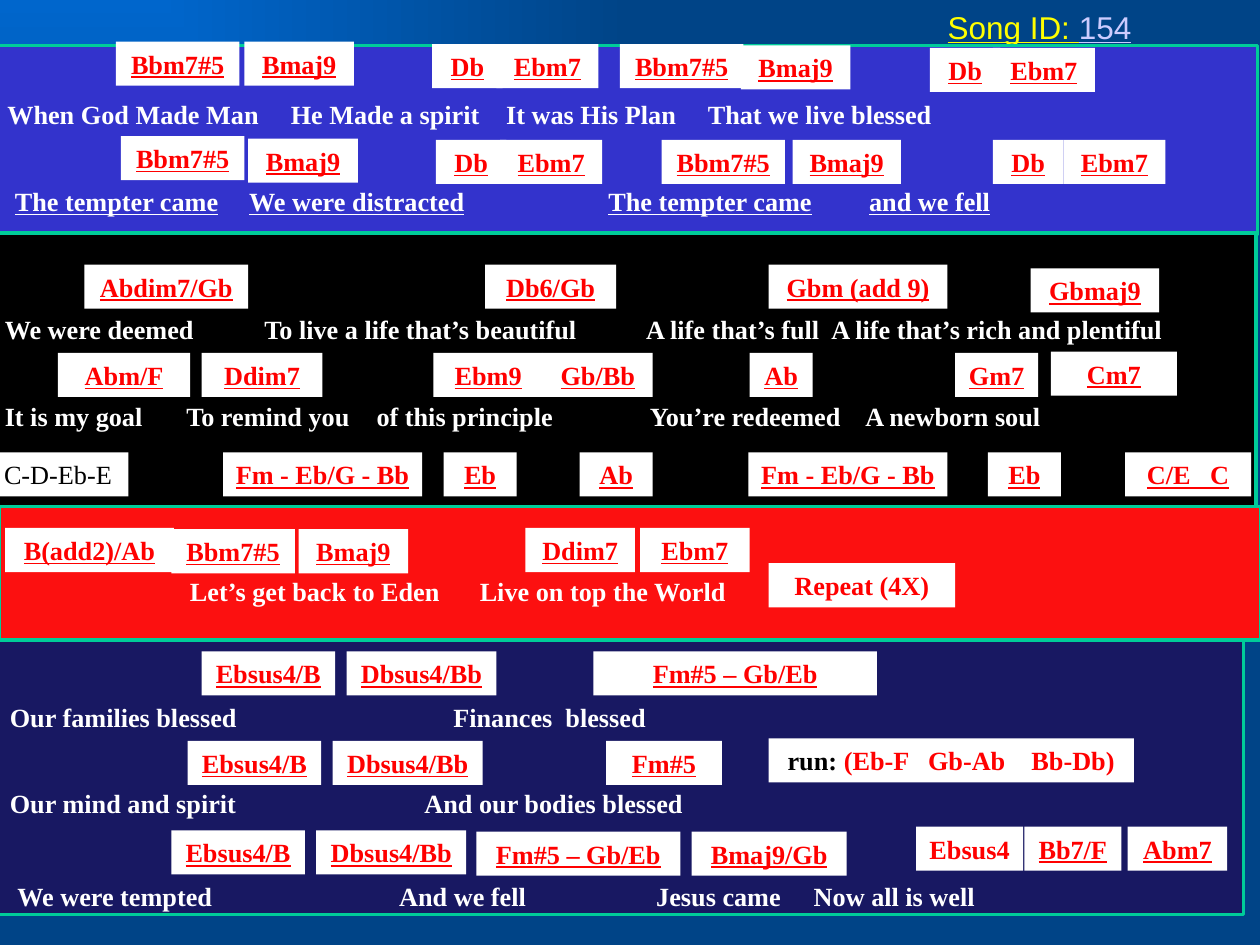
import pptx
import pptx.dml.color
import pptx.enum.dml
import pptx.enum.shapes
import pptx.enum.text
import pptx.oxml
import pptx.oxml.ns
import pptx.util

Inches = pptx.util.Inches
Pt = pptx.util.Pt
qn = pptx.oxml.ns.qn

COLORS = {
    "glow": "0066CC", "deep": "004487", "border": "00CC99",
    "verse": "3333CC", "chorus": "000000", "hook": "FC1010", "bridge": "181862",
    "white": "FFFFFF", "black": "000000", "chord": "FF0000",
    "label": "FFFF00", "number": "CCCCFF",
}
CHIP_STYLES = {  # colour, bold, underline
    "chord": ("chord", True, True),
    "note": ("chord", True, False),
    "notes": ("black", False, False),
}
SERIF = "Times New Roman"
ROW_HEIGHT = 0.35
INSET = 0.1

# Lyrics: left, top, phrases, tab positions, underline.
# Chips: left, top, width, text, then style and black lead-in where needed.
# All positions are measured from the section's top left corner.
VERSE_LYRICS = [
    (-0.04, 0.37, ["When God Made Man", "He Made a spirit", "It was His Plan",
                   "That we live blessed"], [2.31, 4.02, 5.62], False),
    (0.02, 1.06, ["The tempter came", "We were distracted", "The tempter came",
                  "and we fell"], [1.98, 4.83, 6.9], True),
]
VERSE_CHIPS = [
    (0.92, -0.03, 0.98, "Bbm7#5"), (1.94, -0.03, 0.87, "Bmaj9"),
    (3.43, -0.01, 0.56, "Db"), (3.94, -0.01, 0.81, "Ebm7"),
    (5.88, 0, 0.87, "Bmaj9"), (4.92, -0.01, 0.98, "Bbm7#5"),
    (7.38, 0.02, 0.56, "Db"), (7.88, 0.02, 0.81, "Ebm7"),
    (0.96, 0.72, 0.98, "Bbm7#5"), (1.97, 0.74, 0.87, "Bmaj9"),
    (3.46, 0.75, 0.56, "Db"), (3.97, 0.75, 0.81, "Ebm7"),
    (5.25, 0.75, 0.98, "Bbm7#5"), (6.29, 0.75, 0.86, "Bmaj9"),
    (7.88, 0.75, 0.56, "Db"), (8.44, 0.75, 0.81, "Ebm7"),
]
CHORUS_LYRICS = [
    (-0.06, 0.59, ["We were deemed", "To live a life that’s beautiful", "A life that’s full",
                   "A life that’s rich and plentiful"], [2.1, 5.13, 6.6], False),
    (-0.06, 1.28, ["It is my goal", "To remind you", "of this principle", "You’re redeemed",
                   "A newborn soul"], [1.48, 2.99, 5.16, 6.87], False),
]
CHORUS_CHIPS = [
    (0.67, 0.25, 1.3, "Abdim7/Gb"), (3.85, 0.25, 1.04, "Db6/Gb"),
    (6.1, 0.25, 1.42, "Gbm (add 9)"), (8.18, 0.28, 1.02, "Gbmaj9"),
    (0.46, 0.95, 1.05, "Abm/F"), (1.6, 0.95, 0.96, "Ddim7"),
    (3.44, 0.95, 0.87, "Ebm9"), (4.31, 0.95, 0.87, "Gb/Bb"),
    (5.95, 0.95, 0.5, "Ab"), (7.58, 0.95, 0.66, "Gm7"), (8.34, 0.94, 1, "Cm7"),
    (-0.1, 1.74, 1.12, "C-D-Eb-E", "notes"), (1.77, 1.74, 1.58, "Fm - Eb/G - Bb"),
    (3.52, 1.74, 0.58, "Eb"), (4.6, 1.74, 0.58, "Ab"),
    (5.94, 1.74, 1.58, "Fm - Eb/G - Bb"), (7.84, 1.74, 0.58, "Eb"),
    (8.93, 1.74, 1, "C/E   C"),
]
HOOK_LYRICS = [
    (0.01, 0.5, ["", "Let’s get back to Eden", "Live on top the World"], [1.51, 3.81], False),
]
HOOK_CHIPS = [
    (0.04, 0.17, 1.34, "B(add2)/Ab"), (1.36, 0.18, 0.98, "Bbm7#5"),
    (2.37, 0.18, 0.87, "Bmaj9"), (4.17, 0.17, 0.87, "Ddim7"),
    (5.08, 0.17, 0.87, "Ebm7"), (6.1, 0.45, 1.48, "Repeat (4X)", "note"),
]
BRIDGE_LYRICS = [
    (-0.02, 0.44, ["Our families blessed", "Finances  blessed"], [3.6], False),
    (-0.02, 1.12, ["Our mind and spirit", "And our bodies blessed"], [3.37], False),
    (0.04, 1.86, ["We were tempted", "And we fell", "Jesus came", "Now all is well"],
     [3.17, 5.21, 6.46], False),
]
BRIDGE_CHIPS = [
    (4.71, 0.09, 2.25, "Fm#5 – Gb/Eb"), (4.81, 0.8, 0.92, "Fm#5"),
    (6.1, 0.78, 2.9, "(Eb-F   Gb-Ab    Bb-Db)", "note", "run: "),
    (3.78, 1.52, 1.62, "Fm#5 – Gb/Eb"), (5.49, 1.52, 1.23, "Bmaj9/Gb"),
    (7.27, 1.48, 0.85, "Ebsus4", "note"), (8.13, 1.48, 0.77, "Bb7/F"),
    (8.95, 1.48, 0.79, "Abm7"),
]
for row_left, row_top in [(1.6, 0.09), (1.49, 0.8), (1.36, 1.51)]:
    BRIDGE_CHIPS += [(row_left, row_top, 1.06, "Ebsus4/B"),
                     (row_left + 1.15, row_top, 1.19, "Dbsus4/Bb")]


def rgb(name):
    return pptx.dml.color.RGBColor.from_string(COLORS[name])


def set_font(font, color, size=15, name=SERIF, bold=False, underline=False):
    font.name, font.size, font.bold, font.underline = name, Pt(size), bold, underline
    font.color.rgb = rgb(color)


def add_box(slide, left, top, width, height, fill):
    shape = slide.shapes.add_shape(pptx.enum.shapes.MSO_SHAPE.RECTANGLE, Inches(left),
                                   Inches(top), Inches(width), Inches(height))
    shape.shadow.inherit = False
    shape.fill.solid()
    shape.fill.fore_color.rgb = rgb(fill)
    shape.line.fill.background()
    return shape


def add_chip(slide, left, top, width, text, style="chord", lead=""):
    """White label with a chord name, after an optional black lead-in."""
    frame = add_box(slide, left, top, width, ROW_HEIGHT, "white").text_frame
    frame.word_wrap = False
    frame.vertical_anchor = pptx.enum.text.MSO_ANCHOR.MIDDLE
    paragraph = frame.paragraphs[0]
    paragraph.alignment = pptx.enum.text.PP_ALIGN.CENTER
    color, bold, underline = CHIP_STYLES[style]
    set_font(paragraph.font, color, bold=bold, underline=underline)
    for part, part_color in [(lead, "black"), (text, color)]:
        if part:
            run = paragraph.add_run()
            run.text = part
            set_font(run.font, part_color, bold=bold, underline=underline)


def add_lyric(slide, left, top, phrases, tabs, underline):
    """One line of phrases, each starting at its own tab stop."""
    box = slide.shapes.add_textbox(Inches(left), Inches(top), Inches(10), Inches(ROW_HEIGHT))
    box.text_frame.word_wrap = True
    paragraph = box.text_frame.paragraphs[0]
    paragraph.text = "\t".join(phrases)
    set_font(paragraph.font, "white", bold=True, underline=underline)
    set_font(paragraph.runs[0].font, "white", bold=True, underline=underline)
    tab_list = pptx.oxml.parse_xml(
        '<a:tabLst xmlns:a="http://schemas.openxmlformats.org/drawingml/2006/main"/>')
    for tab in tabs:
        stop = tab_list.makeelement(qn("a:tab"), {
            "pos": str(Inches(tab - left - INSET)), "algn": "l"})
        tab_list.append(stop)
    paragraph._p.get_or_add_pPr().insert(0, tab_list)


def add_section(slide, top, height, fill, bleed, width, lyrics, chips):
    """Bordered panel shifted left by bleed, with its lyrics and chords."""
    panel = add_box(slide, -bleed, top, width, height, fill)
    panel.line.color.rgb = rgb("border")
    panel.line.width = Pt(2)
    for left, offset, *rest in lyrics:
        add_lyric(slide, left, top + offset, *rest)
    for left, offset, *rest in chips:
        add_chip(slide, left, top + offset, *rest)


def set_background(slide):
    fill = slide.background.fill
    fill.gradient()
    for stop, name in zip(fill.gradient_stops, ["glow", "deep"]):
        stop.color.rgb = rgb(name)
    gradient = slide.element.find(".//" + qn("a:gradFill"))
    shade = gradient.makeelement(qn("a:path"), {"path": "rect"})
    corner = shade.makeelement(qn("a:fillToRect"), {"r": "100000", "b": "100000"})
    shade.append(corner)
    gradient.replace(gradient.find(qn("a:lin")), shade)


def add_song_id(slide, left, top, width, height):
    title = slide.shapes.title
    title.left, title.top = Inches(left), Inches(top)
    title.width, title.height = Inches(width), Inches(height)
    frame = title.text_frame
    frame.auto_size = pptx.enum.text.MSO_AUTO_SIZE.NONE
    frame.vertical_anchor = pptx.enum.text.MSO_ANCHOR.TOP
    paragraph = frame.paragraphs[0]
    paragraph.alignment = pptx.enum.text.PP_ALIGN.LEFT
    for text, color in [("Song ID: ", "label"), ("154", "number")]:
        run = paragraph.add_run()
        run.text = text
        set_font(run.font, color, size=18, name="Arial", underline=True)


def main():
    presentation = pptx.Presentation()
    presentation.slide_width, presentation.slide_height = Inches(10), Inches(7.5)
    slide = presentation.slides.add_slide(presentation.slide_layouts[5])
    set_background(slide)
    add_song_id(slide, 7.42, 0.01, 1.75, 0.4)
    add_section(slide, 5.08, 2.18, "bridge", 0.13, 10, BRIDGE_LYRICS, BRIDGE_CHIPS)
    add_section(slide, 0.36, 1.5, "verse", 0.02, 10, VERSE_LYRICS, VERSE_CHIPS)
    add_section(slide, 4.02, 1.06, "hook", 0.01, 10.02, HOOK_LYRICS, HOOK_CHIPS)
    add_section(slide, 1.85, 2.17, "chorus", 0.03, 10, CHORUS_LYRICS, CHORUS_CHIPS)
    presentation.save("out.pptx")


if __name__ == "__main__":
    main()
